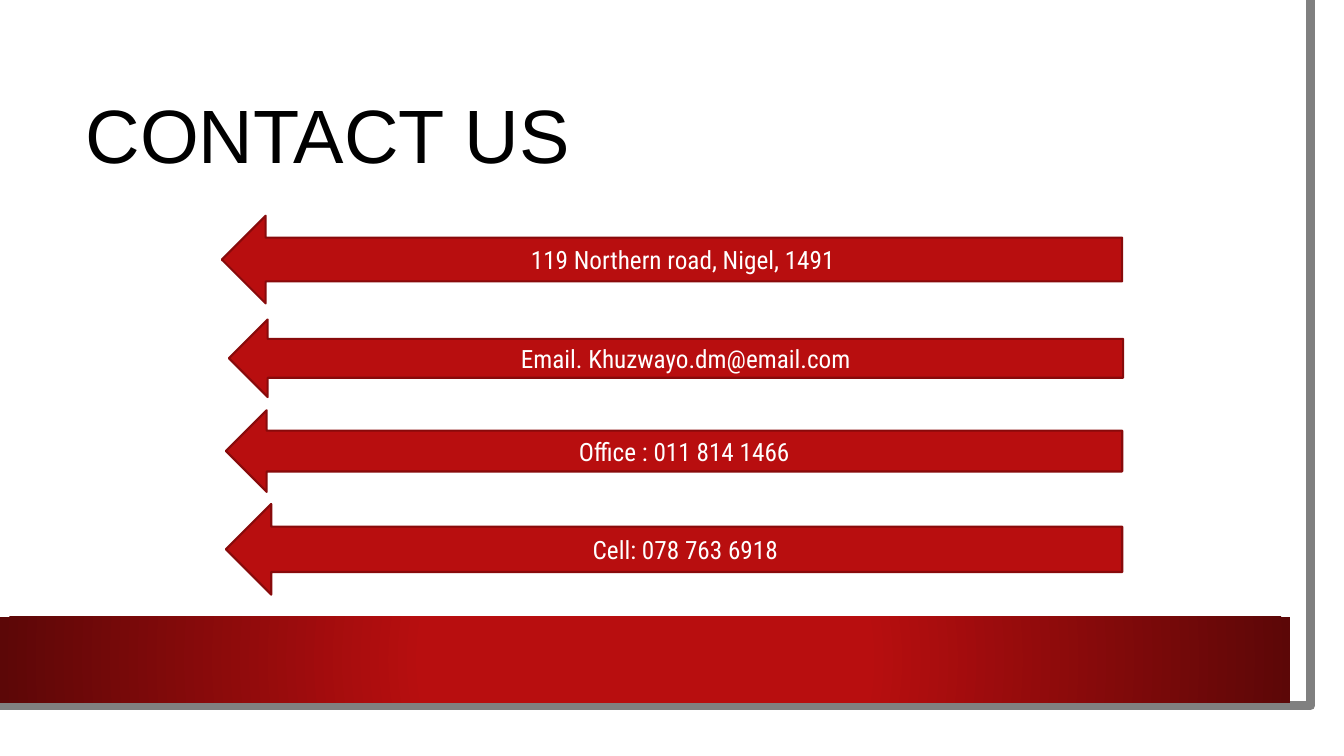
"""Build the contact slide with four red arrows above a gradient band."""
import dataclasses

import lxml.etree
import pptx
import pptx.dml.color
import pptx.enum.shapes
import pptx.enum.text
import pptx.oxml.ns
import pptx.util

Inches = pptx.util.Inches
Pt = pptx.util.Pt
Shapes = pptx.enum.shapes.MSO_SHAPE
Align = pptx.enum.text.PP_ALIGN

RED = "B80E0F"
DARK_RED = "880A0B"
DEEP_RED = "5C0707"
WHITE = "FFFFFF"
BLACK = "000000"
GREY = "808080"


@dataclasses.dataclass(frozen=True)
class ContactArrow:
    text: str
    left: float
    top: float
    width: float
    height: float


ARROWS = [
    ContactArrow("119 Northern road, Nigel, 1491", 2.2, 2.14, 8.93, 0.87),
    ContactArrow("Email. Khuzwayo.dm@email.com", 2.27, 3.17, 8.87, 0.77),
    ContactArrow("Cell: 078 763 6918", 2.24, 5, 8.89, 0.9),
    ContactArrow("Office : 011 814 1466", 2.24, 4.07, 8.89, 0.81),
]


def color(value: str) -> pptx.dml.color.RGBColor:
    return pptx.dml.color.RGBColor.from_string(value)


def write(shape, text: str, *, size: float, font: str, ink: str,
          align=Align.LEFT, spacing: float = 1.0) -> None:
    frame = shape.text_frame
    frame.word_wrap = True
    frame.vertical_anchor = pptx.enum.text.MSO_ANCHOR.MIDDLE
    para = frame.paragraphs[0]
    para.alignment = align
    para.line_spacing = spacing
    span = para.add_run()
    span.text = text
    span.font.size = Pt(size)
    span.font.name = font
    span.font.color.rgb = color(ink)


def add_block(page, kind, left: float, top: float, width: float, height: float, fill: str):
    block = page.shapes.add_shape(kind, Inches(left), Inches(top), Inches(width), Inches(height))
    block.shadow.inherit = False
    block.fill.solid()
    block.fill.fore_color.rgb = color(fill)
    block.line.fill.background()
    return block


def add_edge(page) -> None:
    builder = page.shapes.build_freeform(12.82, 0, scale=Inches(1))
    builder.add_line_segments([(12.85, 7.02), (-0.03, 7.01)], close=False)
    edge = builder.convert_to_shape()
    edge.shadow.inherit = False
    edge.fill.background()
    edge.line.color.rgb = color(GREY)
    edge.line.width = Pt(6.5)


def add_band(page) -> None:
    band = add_block(page, Shapes.RECTANGLE, 0, 6.12, 12.8, 0.85, RED)
    band.fill.gradient()
    for stop, position, shade in zip(band.fill.gradient_stops, (0.34, 1), (RED, DEEP_RED)):
        stop.position = position
        stop.color.rgb = color(shade)
    qn = pptx.oxml.ns.qn
    linear = band.fill._xPr.find(qn("a:gradFill")).find(qn("a:lin"))
    radial = lxml.etree.Element(qn("a:path"), {"path": "circle"})
    lxml.etree.SubElement(radial, qn("a:fillToRect"), dict.fromkeys("ltrb", "50000"))
    linear.getparent().replace(linear, radial)


def add_title(page) -> None:
    box = page.shapes.add_textbox(Inches(0.75), Inches(0.75), Inches(11.37), Inches(1.26))
    write(box, "CONTACT US", size=54, font="Arial", ink=BLACK, spacing=0.9)


def add_arrow(page, arrow: ContactArrow) -> None:
    shape = add_block(page, Shapes.LEFT_ARROW, arrow.left, arrow.top,
                      arrow.width, arrow.height, RED)
    shape.line.color.rgb = color(DARK_RED)
    shape.line.width = Pt(1.5)
    write(shape, arrow.text, size=18, font="Roboto Condensed", ink=WHITE, align=Align.CENTER)


def main() -> None:
    deck = pptx.Presentation()
    deck.slide_width = Inches(13.33)
    deck.slide_height = Inches(7.5)
    page = deck.slides.add_slide(deck.slide_layouts[6])
    add_block(page, Shapes.RECTANGLE, 0, 0, 13.1, 7.27, WHITE)
    add_edge(page)
    add_band(page)
    add_title(page)
    for arrow in ARROWS:
        add_arrow(page, arrow)
    deck.save("out.pptx")


if __name__ == "__main__":
    main()
